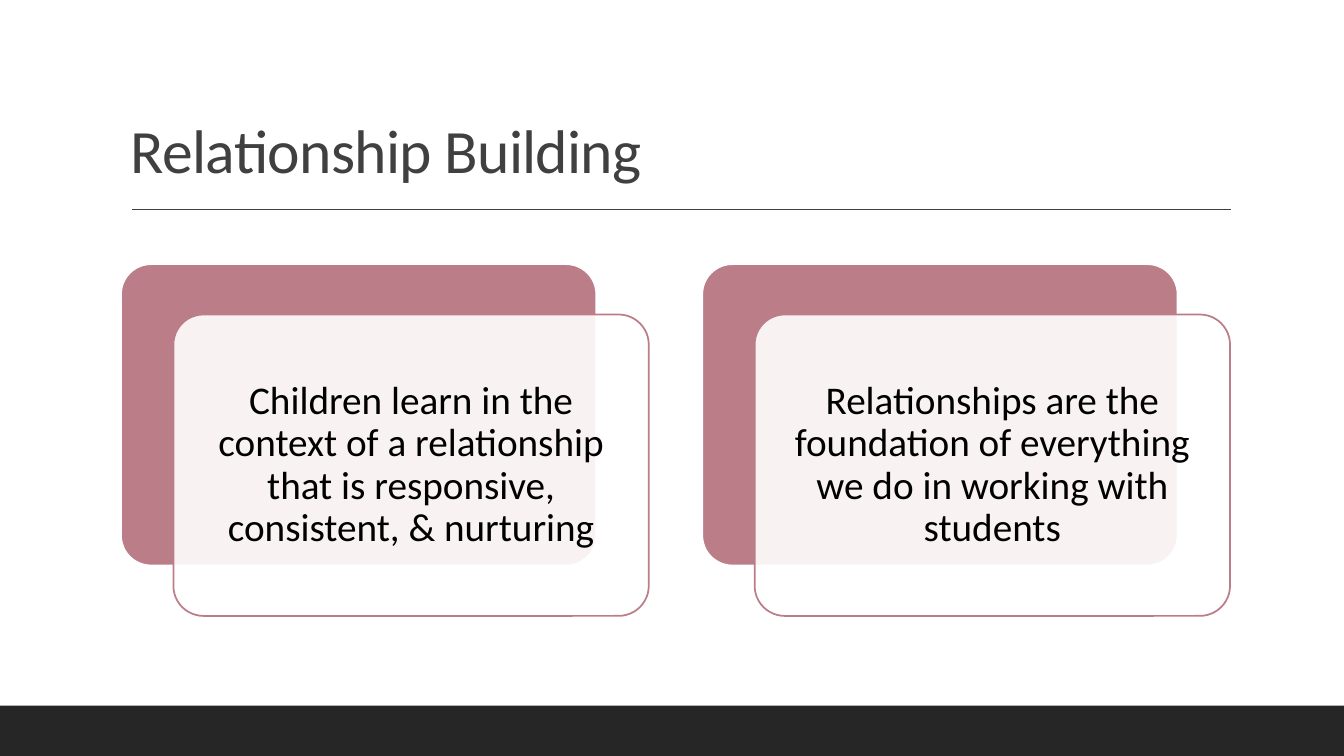
from pptx import Presentation
from pptx.dml.color import RGBColor
from pptx.enum.shapes import MSO_CONNECTOR, MSO_SHAPE
from pptx.enum.text import MSO_ANCHOR, PP_ALIGN
from pptx.oxml.ns import qn
from pptx.util import Inches, Pt
from lxml import etree

RECT, ROUNDED = MSO_SHAPE.RECTANGLE, MSO_SHAPE.ROUNDED_RECTANGLE
STRAIGHT = MSO_CONNECTOR.STRAIGHT
MIDDLE, BOTTOM = MSO_ANCHOR.MIDDLE, MSO_ANCHOR.BOTTOM
LEFT, CENTER = PP_ALIGN.LEFT, PP_ALIGN.CENTER
WIDTH, HEIGHT = 13.33, 7.5
FONT = "Calibri"
INK, ROSE, WHITE, BLACK, FOOTER = "404040", "BB7E89", "FFFFFF", "000000", "262626"
CARDS = [
    "Children learn in the context of a relationship that is responsive, consistent, & nurturing",
    "Relationships are the foundation of everything we do in working with students",
]


def rgb(value):
    """Turn a hex string into a colour."""
    return RGBColor.from_string(value)


def write(sp, text, size, color, align, anchor):
    """Fill a shape with one formatted paragraph and return its run."""
    tf = sp.text_frame
    tf.word_wrap = True
    tf.vertical_anchor = anchor
    tf.text = text
    p = tf.paragraphs[0]
    p.alignment = align
    p.line_spacing = 0.9
    r = p.runs[0]
    r.font.name, r.font.size = FONT, Pt(size)
    r.font.color.rgb = rgb(color)
    return r


def add_box(s, kind, box, fill, line=None):
    """Add a filled shape, outlined when a line colour is given."""
    sp = s.shapes.add_shape(kind, *map(Inches, box))
    sp.shadow.inherit = False
    sp.fill.solid()
    sp.fill.fore_color.rgb = rgb(fill)
    if line:
        sp.line.color.rgb = rgb(line)
        sp.line.width = Pt(1.25)
    else:
        sp.line.fill.background()
    if kind == ROUNDED:
        sp.adjustments[0] = 0.1
    return sp


def add_header(s, box, title):
    """Place the title at the foot of the box with a rule below it."""
    x, y, w, h = box
    sp = s.shapes.add_textbox(*map(Inches, box))
    r = write(sp, title, 44, INK, LEFT, BOTTOM)
    r.font._element.set("spc", "-50")
    rule_y = Inches(y + h + 0.18)
    rule = s.shapes.add_connector(
        STRAIGHT, Inches(x + 0.11), rule_y, Inches(x + w + 0.01), rule_y)
    rule.line.color.rgb = rgb(INK)
    rule.line.width = Pt(1)
    etree.SubElement(rule._element.spPr, qn("a:effectLst"))


def add_card(s, box, text):
    """Place a rose panel and a translucent text card at opposite corners of the box."""
    x, y, w, h = box
    dx, dy = 0.52, 0.5
    add_box(s, ROUNDED, (x, y, w - dx, h - dy), ROSE, WHITE)
    card = add_box(s, ROUNDED, (x + dx, y + dy, w - dx, h - dy), WHITE, ROSE)
    color = card._element.spPr.find(qn("a:solidFill"))[0]
    etree.SubElement(color, qn("a:alpha"), val="90000")
    tf = card.text_frame
    tf.margin_left = tf.margin_right = tf.margin_top = tf.margin_bottom = Inches(0.12)
    write(card, text, 28, BLACK, CENTER, MIDDLE)


def add_cards(s, box, texts):
    """Spread equal cards across the box."""
    x, y, w, h = box
    gap = 0.53
    card_w = (w - gap * (len(texts) - 1)) / len(texts)
    for i, text in enumerate(texts):
        add_card(s, (x + i * (card_w + gap), y, card_w, h), text)


def main():
    """Build and save the slide."""
    prs = Presentation()
    prs.slide_width, prs.slide_height = Inches(WIDTH), Inches(HEIGHT)
    s = prs.slides.add_slide(prs.slide_layouts[6])
    add_header(s, (1.2, 0.31, 11, 1.59), "Relationship Building")
    add_box(s, RECT, (0, HEIGHT - 0.5, WIDTH, 0.5), FOOTER)
    add_cards(s, (1.2, 2.62, 11, 3.49), CARDS)
    prs.save("out.pptx")


if __name__ == "__main__":
    main()
